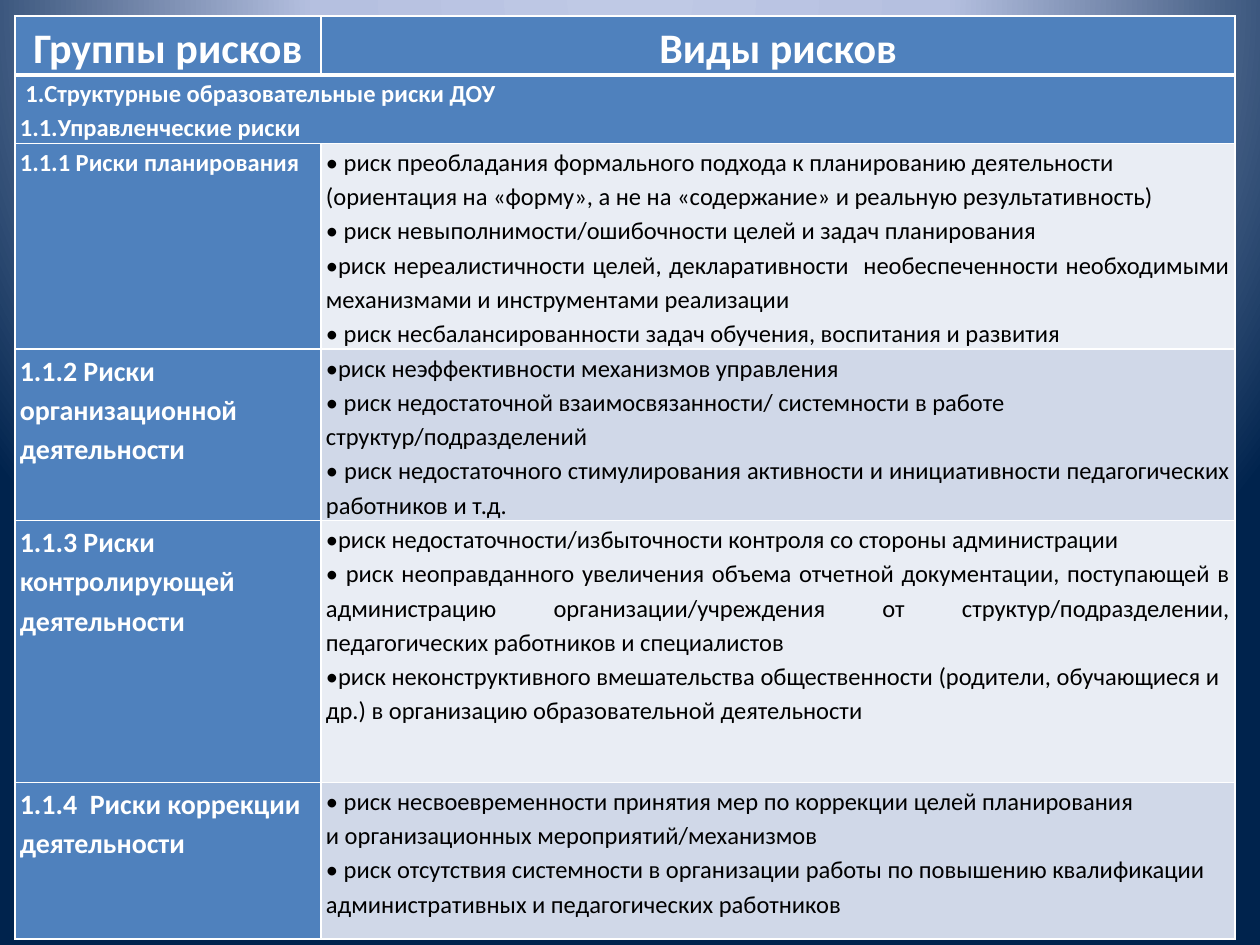
import pptx
import pptx.dml.color
import pptx.enum.text
import pptx.oxml
import pptx.oxml.ns
import pptx.util
from dataclasses import dataclass

Cm = pptx.util.Cm
Pt = pptx.util.Pt
ALIGN = pptx.enum.text.PP_ALIGN


@dataclass(frozen=True)
class Theme:
    font: str = "Calibri"
    white: str = "FFFFFF"
    black: str = "000000"
    head: str = "4F81BD"
    bands: tuple = ("E9EDF4", "D0D8E8")
    backdrop: tuple = ((0, "BFC9E5"), (40, "B5C0E0"), (100, "00234D"))
    header_size: int = 24
    label_size: int = 16
    body_size: int = 14
    spacing: float = 1.15


def rgb(value):
    return pptx.dml.color.RGBColor.from_string(value)


def write(p, text, *, font, size, color, bold=False, align=ALIGN.LEFT, spacing=1.0):
    p.alignment, p.line_spacing = align, spacing
    r = p.add_run()
    r.text = text
    r.font.name, r.font.size, r.font.bold = font, Pt(size), bold
    r.font.color.rgb = rgb(color)


class Deck:
    def __init__(self, theme):
        self.theme = theme
        self.prs = pptx.Presentation()
        self.prs.slide_width, self.prs.slide_height = Cm(25.4), Cm(19.05)
        self.s = self.prs.slides.add_slide(self.prs.slide_layouts[6])

    def background(self):
        """Fill the slide with a round gradient centred above its top edge."""
        self.s.background.fill.gradient()
        old = self.s.element.xpath(".//p:bgPr/a:gradFill")[0]
        stops = "".join(
            f'<a:gs pos="{pos * 1000}"><a:srgbClr val="{color}"/></a:gs>'
            for pos, color in self.theme.backdrop)
        new = pptx.oxml.parse_xml(
            f'<a:gradFill {pptx.oxml.ns.nsdecls("a")} rotWithShape="1">'
            f'<a:gsLst>{stops}</a:gsLst><a:path path="circle">'
            '<a:fillToRect l="50000" t="-80000" r="50000" b="180000"/>'
            '</a:path></a:gradFill>')
        old.getparent().replace(old, new)

    def table(self, left, top, widths, heights):
        tbl = self.s.shapes.add_table(
            len(heights), len(widths), Cm(left), Cm(top),
            Cm(sum(widths)), Cm(sum(heights))).table
        for col, width in zip(tbl.columns, widths):
            col.width = Cm(width)
        for row, height in zip(tbl.rows, heights):
            row.height = Cm(height)
        return tbl

    def cell(self, cell, lines, fill, aligns=None, **style):
        cell.margin_left = cell.margin_right = Cm(0.1)
        cell.margin_top = cell.margin_bottom = 0
        cell.fill.solid()
        cell.fill.fore_color.rgb = rgb(fill)
        tf = cell.text_frame
        for i, line in enumerate(lines):
            p = tf.add_paragraph() if i else tf.paragraphs[0]
            write(p, line, font=self.theme.font, spacing=self.theme.spacing,
                  align=aligns[i] if aligns else ALIGN.LEFT, **style)

    def borders(self, cell, **widths):
        """Draw cell borders; keys are L, R, T, B, in that order."""
        tc_pr = cell.fill and cell._tc.get_or_add_tcPr()
        for i, (side, width) in enumerate(widths.items()):
            tc_pr.insert(i, pptx.oxml.parse_xml(
                f'<a:ln{side} {pptx.oxml.ns.nsdecls("a")} w="{Pt(width)}">'
                f'<a:solidFill><a:srgbClr val="{self.theme.white}"/></a:solidFill>'
                f'</a:ln{side}>'))


HEADERS = ["Группы рисков", "Виды рисков"]
SECTION = [" 1.Структурные образовательные риски ДОУ", "1.1.Управленческие риски"]

# Group lines, risk lines, index of the risk line that is not justified
GROUPS = [
    (["1.1.1 Риски планирования"],
     ["• риск преобладания формального подхода к планированию деятельности",
      "(ориентация на «форму», а не на «содержание» и реальную результативность)",
      "• риск невыполнимости/ошибочности целей и задач планирования",
      "•риск нереалистичности целей, декларативности  необеспеченности "
      "необходимыми механизмами и инструментами реализации",
      "• риск несбалансированности задач обучения, воспитания и развития"], 4),
    (["1.1.2 Риски  организационной", "деятельности"],
     ["•риск неэффективности механизмов управления",
      "• риск недостаточной взаимосвязанности/ системности в работе "
      "структур/подразделений",
      "• риск недостаточного стимулирования активности и инициативности "
      "педагогических работников и т.д."], 1),
    (["1.1.3 Риски", "контролирующей", "деятельности"],
     ["•риск недостаточности/избыточности контроля со стороны администрации",
      "• риск неоправданного увеличения объема отчетной документации, "
      "поступающей в администрацию организации/учреждения от "
      "структур/подразделении, педагогических работников и специалистов",
      "•риск неконструктивного вмешательства общественности (родители, "
      "обучающиеся и др.) в организацию образовательной деятельности"], 2),
    (["1.1.4  Риски коррекции", "деятельности"],
     ["• риск несвоевременности принятия мер по коррекции целей планирования",
      "и организационных мероприятий/механизмов",
      "• риск отсутствия системности в организации работы по повышению "
      "квалификации административных и педагогических работников"], 2),
]


def main():
    theme = Theme()
    deck = Deck(theme)
    deck.background()
    tbl = deck.table(0.3, 0.32, [6.17, 18.43], [1.19, 1.37, 4.14, 3.44, 5.28, 3.15])
    tbl.first_col = True
    strong = dict(color=theme.white, bold=True)

    # Header row
    for col, text in enumerate(HEADERS):
        cell = tbl.cell(0, col)
        deck.cell(cell, [text], theme.head, [ALIGN.CENTER],
                  size=theme.header_size, **strong)
        deck.borders(cell, L=1, R=1, T=1, B=3)

    # Section row across both columns
    tbl.cell(1, 0).merge(tbl.cell(1, 1))
    deck.cell(tbl.cell(1, 0), SECTION, theme.head, size=theme.body_size, **strong)

    # Risk groups
    for i, (labels, risks, left_line) in enumerate(GROUPS):
        size = theme.label_size if i else theme.body_size
        deck.cell(tbl.cell(i + 2, 0), labels, theme.head, size=size, **strong)
        aligns = [ALIGN.LEFT if n == left_line else ALIGN.JUSTIFY
                  for n in range(len(risks))]
        deck.cell(tbl.cell(i + 2, 1), risks, theme.bands[i % 2], aligns,
                  size=theme.body_size, color=theme.black)

    deck.prs.save("out.pptx")


if __name__ == "__main__":
    main()
